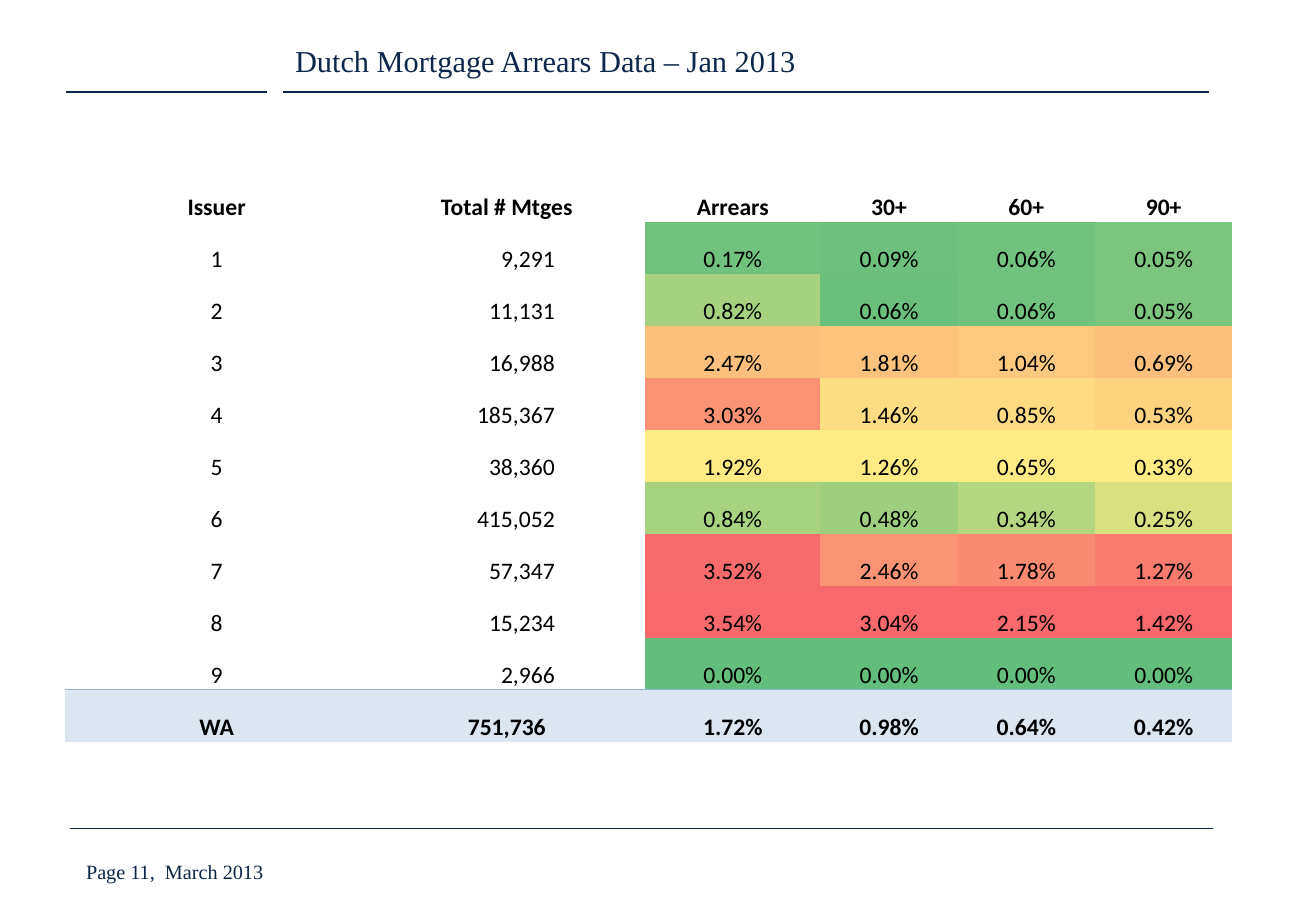
"""Build the Dutch mortgage arrears slide with its heat-mapped table."""
from lxml import etree
from pptx import Presentation
from pptx import util as u
from pptx.dml import color
from pptx.enum import shapes, text
from pptx.oxml import ns

COLOURS = {"navy": "0C274B", "black": "000000", "rule": "95B3D7", "total": "DCE6F1",
           "low": "63BE7B", "middle": "FFEB84", "high": "F8696B"}
HEADINGS = ["Issuer", "Total # Mtges", "Arrears", "30+", "60+", "90+"]
ISSUERS = [
    ["1", "9,291", "0.17%", "0.09%", "0.06%", "0.05%"],
    ["2", "11,131", "0.82%", "0.06%", "0.06%", "0.05%"],
    ["3", "16,988", "2.47%", "1.81%", "1.04%", "0.69%"],
    ["4", "185,367", "3.03%", "1.46%", "0.85%", "0.53%"],
    ["5", "38,360", "1.92%", "1.26%", "0.65%", "0.33%"],
    ["6", "415,052", "0.84%", "0.48%", "0.34%", "0.25%"],
    ["7", "57,347", "3.52%", "2.46%", "1.78%", "1.27%"],
    ["8", "15,234", "3.54%", "3.04%", "2.15%", "1.42%"],
    ["9", "2,966", "0.00%", "0.00%", "0.00%", "0.00%"],
]
AVERAGE = ["WA", "751,736", "1.72%", "0.98%", "0.64%", "0.42%"]
WIDTHS = [180, 164, 103.9, 81.4, 81.4, 81.4]
ROW_HEIGHT = 30.82
NO_STYLE = "{2D5ABB26-0587-4C30-8999-92F81FD0307C}"


def blend(start, end, share):
    pairs = zip(bytes.fromhex(COLOURS[start]), bytes.fromhex(COLOURS[end]))
    return "".join(f"{round(a + (b - a) * share):02X}" for a, b in pairs)


def heat_colours(column):
    rates = [float(row[column].rstrip("%")) for row in ISSUERS]
    ranked = sorted(rates)
    low, median, high = ranked[0], ranked[len(ranked) // 2], ranked[-1]
    return [blend("low", "middle", (rate - low) / (median - low)) if rate <= median
            else blend("middle", "high", (rate - median) / (high - median))
            for rate in rates]


class ArrearsSlide:
    def __init__(self, slide, serif="Times New Roman", sans="Calibri"):
        self.slide, self.serif, self.sans = slide, serif, sans

    def add_words(self, paragraph, words, font, size, colour, bold=False):
        run = paragraph.add_run()
        run.text = words
        run.font.name, run.font.size, run.font.bold = font, u.Pt(size), bold
        run.font.color.rgb = color.RGBColor.from_string(COLOURS[colour])

    def rule(self, left, right, y):
        line = self.slide.shapes.add_connector(
            shapes.MSO_CONNECTOR.STRAIGHT, u.Pt(left), u.Pt(y), u.Pt(right), u.Pt(y))
        line.line.width = u.Pt(0.75)
        line.line.color.rgb = color.RGBColor.from_string(COLOURS["navy"])
        etree.SubElement(line._element.spPr, ns.qn("a:effectLst"))

    def label(self, words, left, top, width, height, size):
        box = self.slide.shapes.add_textbox(*map(u.Pt, (left, top, width, height)))
        frame = box.text_frame
        frame.word_wrap = True
        frame.vertical_anchor = text.MSO_ANCHOR.MIDDLE
        self.add_words(frame.paragraphs[0], words, self.serif, size, "navy")

    def border(self, cell, side):
        edge = etree.SubElement(cell._tc.get_or_add_tcPr(), ns.qn(f"a:{side}"),
                                w=str(u.Pt(0.5)))
        fill = etree.SubElement(edge, ns.qn("a:solidFill"))
        etree.SubElement(fill, ns.qn("a:srgbClr"), val=COLOURS["rule"])

    def cell(self, cell, words, bold=False, fill=None, edge=None, indent=None):
        cell.margin_left = cell.margin_top = u.Pt(0.7)
        cell.margin_right = u.Pt(indent or 0.7)
        cell.margin_bottom = 0
        cell.vertical_anchor = text.MSO_ANCHOR.BOTTOM
        if edge:
            self.border(cell, edge)
        if fill:
            cell.fill.solid()
            cell.fill.fore_color.rgb = color.RGBColor.from_string(fill)
        else:
            cell.fill.background()
        paragraph = cell.text_frame.paragraphs[0]
        paragraph.alignment = text.PP_ALIGN.RIGHT if indent else text.PP_ALIGN.CENTER
        self.add_words(paragraph, words, self.sans, 14, "black", bold)

    def arrears_table(self, left, top):
        rows = [HEADINGS, *ISSUERS, AVERAGE]
        last = len(rows) - 1
        table = self.slide.shapes.add_table(
            len(rows), len(HEADINGS), u.Pt(left), u.Pt(top),
            u.Pt(sum(WIDTHS)), u.Pt(ROW_HEIGHT * len(rows))).table
        table.first_row = table.horz_banding = False
        table._tbl.tblPr.find(ns.qn("a:tableStyleId")).text = NO_STYLE
        for row in table.rows:
            row.height = u.Pt(ROW_HEIGHT)
        for c, width in enumerate(WIDTHS):
            table.columns[c].width = u.Pt(width)
            issuer_fills = heat_colours(c) if c > 1 else [None] * len(ISSUERS)
            fills = [None, *issuer_fills, COLOURS["total"]]
            for r, row in enumerate(rows):
                self.cell(table.cell(r, c), row[c], bold=r in (0, last), fill=fills[r],
                          edge={last - 1: "lnB", last: "lnT"}.get(r),
                          indent=53.5 if c == 1 and 0 < r < last else None)


def main():
    deck = Presentation()
    deck.slide_width, deck.slide_height = u.Pt(780), u.Pt(540)
    page = ArrearsSlide(deck.slides.add_slide(deck.slide_layouts[6]))
    for left, right, y in [(167.8, 716.4, 54.5), (39, 158.4, 54.5), (41.6, 718.8, 491)]:
        page.rule(left, right, y)
    page.label("Page 11,  March 2013", 43.9, 505.5, 193, 21.6, 12)
    page.label("Dutch Mortgage Arrears Data – Jan 2013", 167.8, 21.2, 549.4, 29, 18)
    page.arrears_table(38.4, 100.8)
    deck.save("out.pptx")


if __name__ == "__main__":
    main()
